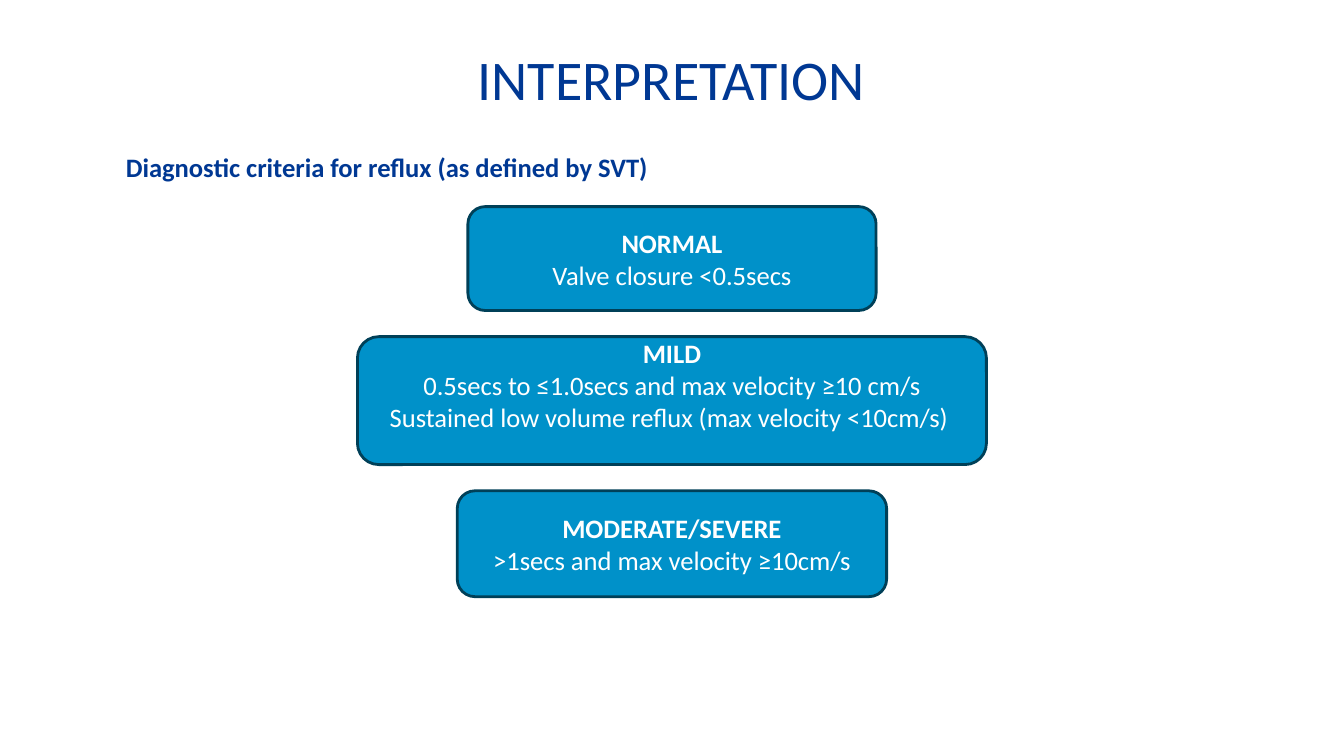
from dataclasses import dataclass

from pptx import Presentation
from pptx.dml.color import RGBColor
from pptx.enum.shapes import MSO_SHAPE as Shape
from pptx.enum.text import MSO_ANCHOR as Anchor, PP_ALIGN as Align
from pptx.util import Pt

# Content
TITLE = "INTERPRETATION"
SUBTITLE = "Diagnostic criteria for reflux (as defined by SVT)"
# grade, criteria, width, height, extra space under the text
GRADES = [
    ("NORMAL", ["Valve closure <0.5secs"], 291.6, 74.2, 0),
    ("MILD", ["0.5secs to ≤1.0secs and max velocity ≥10 cm/s",
              "Sustained low volume reflux (max velocity <10cm/s) "], 449.3, 91.4, 22),
    ("MODERATE/SEVERE", [">1secs and max velocity ≥10cm/s"], 306.7, 75.6, 0),
]


@dataclass(frozen=True)
class Theme:
    font: str = "Calibri"
    navy: RGBColor = RGBColor(0x00, 0x38, 0x93)
    blue: RGBColor = RGBColor(0x00, 0x91, 0xC9)
    edge: RGBColor = RGBColor(0x00, 0x40, 0x58)
    white: RGBColor = RGBColor(0xFF, 0xFF, 0xFF)
    title_size: float = 40
    text_size: float = 19


THEME = Theme()
PAGE_WIDTH, PAGE_HEIGHT = 960, 540
TEXT_LEFT, TEXT_WIDTH = 82.8, 793.4
GRADES_TOP, GRADES_GAP = 147.6, 18.7
INSET = 3.6


def add_line(frame, index, text, size, color, bold=False, align=Align.CENTER):
    para = frame.paragraphs[0] if index == 0 else frame.add_paragraph()
    para.alignment = align
    span = para.add_run()
    span.text = text
    span.font.name, span.font.size = THEME.font, Pt(size)
    span.font.bold, span.font.color.rgb = bold, color
    return para


def add_text_box(page, top, height, anchor):
    box = page.shapes.add_textbox(Pt(TEXT_LEFT), Pt(top), Pt(TEXT_WIDTH), Pt(height))
    box.text_frame.word_wrap = True
    box.text_frame.vertical_anchor = anchor
    return box.text_frame


def add_grade(page, top, grade, criteria, width, height, space_below):
    box = page.shapes.add_shape(Shape.ROUNDED_RECTANGLE, Pt((PAGE_WIDTH - width) / 2),
                                Pt(top), Pt(width), Pt(height))
    box.shadow.inherit = False
    box.fill.solid()
    box.fill.fore_color.rgb = THEME.blue
    box.line.color.rgb, box.line.width = THEME.edge, Pt(2)
    frame = box.text_frame
    frame.word_wrap = True
    frame.vertical_anchor = Anchor.MIDDLE
    frame.margin_bottom = Pt(INSET + space_below)
    for index, text in enumerate([grade, *criteria]):
        add_line(frame, index, text, THEME.text_size, THEME.white, bold=index == 0)


def main():
    deck = Presentation()
    deck.slide_width, deck.slide_height = Pt(PAGE_WIDTH), Pt(PAGE_HEIGHT)
    page = deck.slides.add_slide(deck.slide_layouts[6])

    # Headings
    title = add_text_box(page, 12.2, 72, Anchor.BOTTOM)
    add_line(title, 0, TITLE, THEME.title_size, THEME.navy).line_spacing = 0.9
    subtitle = add_text_box(page, 104.4, 32, Anchor.TOP)
    add_line(subtitle, 0, SUBTITLE, THEME.text_size, THEME.navy, True, Align.LEFT)

    # Stack of grades, centred on the page
    top = GRADES_TOP
    for grade, criteria, width, height, space_below in GRADES:
        add_grade(page, top, grade, criteria, width, height, space_below)
        top += height + GRADES_GAP

    deck.save("out.pptx")


if __name__ == "__main__":
    main()
